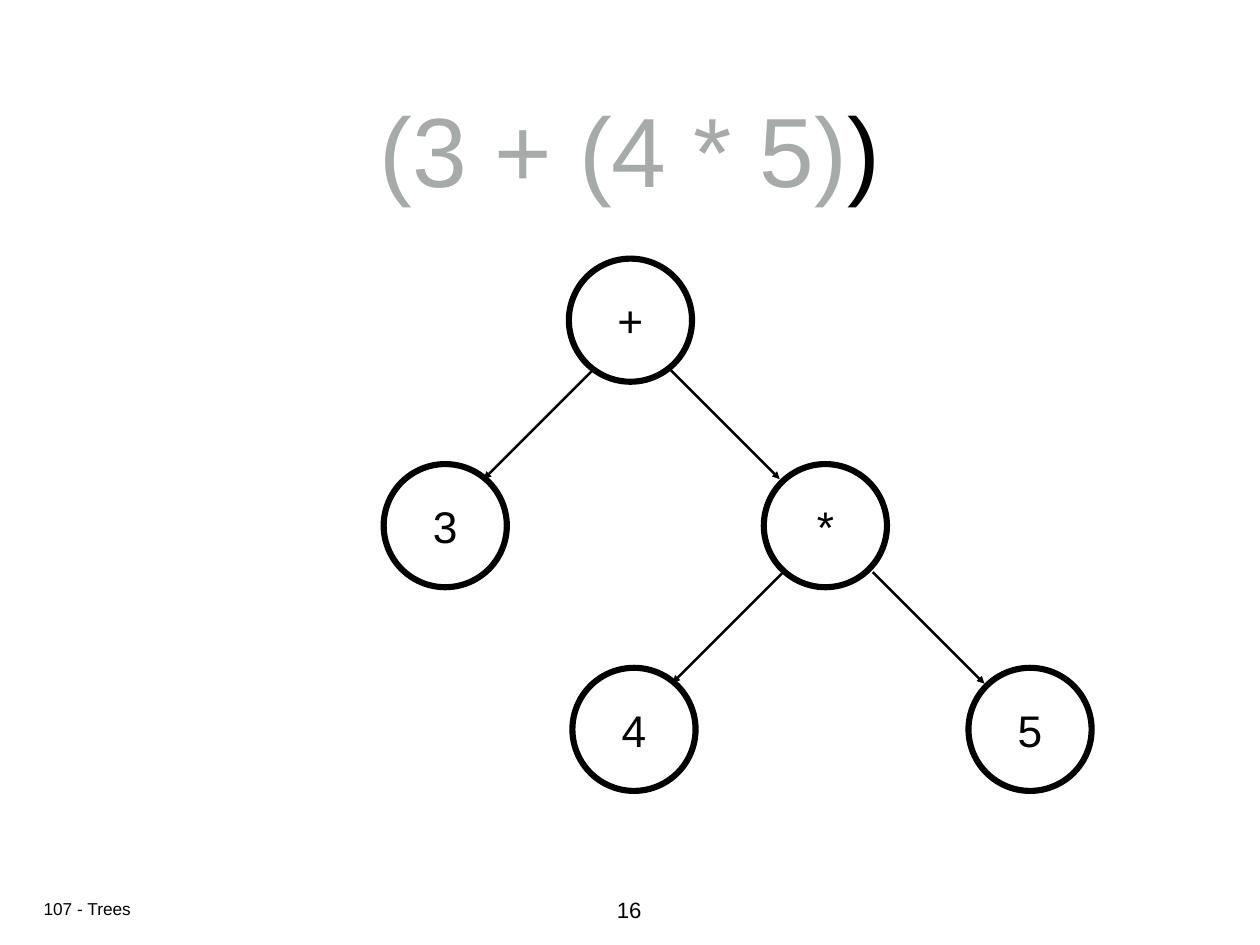
"""Build the expression tree slide for (3 + (4 * 5))."""
import pptx
import pptx.dml.color
import pptx.enum.shapes
import pptx.enum.text
import pptx.oxml
import pptx.oxml.ns
import pptx.util

Inches = pptx.util.Inches


def colour(hex_string):
    return pptx.dml.color.RGBColor.from_string(hex_string)


class TreeSlide:
    font_name = "Arial"
    ink = "000000"
    faded = "A6AAA9"
    paper = "FFFFFF"
    node_size = 1.39
    arrow_span = 1.26

    def __init__(self, presentation):
        self.slide = presentation.slides.add_slide(presentation.slide_layouts[5])

    def set_text(self, shape, runs, size, margin=0, wrap=True, middle=True):
        frame = shape.text_frame
        frame.margin_left = frame.margin_right = Inches(margin)
        frame.margin_top = frame.margin_bottom = Inches(margin)
        frame.word_wrap = wrap
        frame.auto_size = pptx.enum.text.MSO_AUTO_SIZE.NONE
        anchors = pptx.enum.text.MSO_ANCHOR
        frame.vertical_anchor = anchors.MIDDLE if middle else anchors.TOP
        paragraph = frame.paragraphs[0]
        paragraph.alignment = pptx.enum.text.PP_ALIGN.CENTER
        for text, run_colour in runs:
            run = paragraph.add_run()
            run.text = text
            run.font.name = self.font_name
            run.font.size = pptx.util.Pt(size)
            run.font.color.rgb = colour(run_colour)

    def title(self, runs, left, top, width, height):
        shape = self.slide.shapes.title
        shape.left, shape.top = Inches(left), Inches(top)
        shape.width, shape.height = Inches(width), Inches(height)
        self.set_text(shape, runs, 80)

    def label(self, text, left, top, width, height, size, margin=0, middle=True):
        shape = self.slide.shapes.add_textbox(
            Inches(left), Inches(top), Inches(width), Inches(height))
        self.set_text(shape, [(text, self.ink)], size, margin, False, middle)

    def node(self, text, left, top):
        shape = self.slide.shapes.add_shape(
            pptx.enum.shapes.MSO_SHAPE.OVAL, Inches(left), Inches(top),
            Inches(self.node_size), Inches(self.node_size))
        shape.shadow.inherit = False
        shape.fill.solid()
        shape.fill.fore_color.rgb = colour(self.paper)
        shape.line.color.rgb = colour(self.ink)
        shape.line.width = pptx.util.Pt(5)
        self.set_text(shape, [(text, self.ink)], 36)

    def arrow(self, left, top, direction):
        connector = self.slide.shapes.add_connector(
            pptx.enum.shapes.MSO_CONNECTOR.STRAIGHT, Inches(left), Inches(top),
            Inches(left + direction * self.arrow_span),
            Inches(top + self.arrow_span))
        connector.line.color.rgb = colour(self.ink)
        connector.line.width = pptx.util.Pt(2)
        namespace = pptx.oxml.ns.nsdecls("a")
        properties = connector.element.spPr
        properties.find(pptx.oxml.ns.qn("a:ln")).append(
            pptx.oxml.parse_xml(f'<a:tailEnd {namespace} type="triangle"/>'))
        properties.append(pptx.oxml.parse_xml(f"<a:effectLst {namespace}/>"))


def main():
    presentation = pptx.Presentation()
    presentation.slide_width = Inches(14.22)
    presentation.slide_height = Inches(10.67)
    tree = TreeSlide(presentation)

    tree.label("107 - Trees", 0.43, 10.08, 1.11, 0.35, 14, margin=0.06)
    tree.title([("(3 + (4 * 5)", tree.faded), (")", tree.ink)],
               1.04, 0.49, 12.14, 2.36)
    tree.label("16", 6.9, 10.12, 0.4, 0.42, 18, middle=False)

    nodes = [("+", 6.42, 2.92), ("3", 4.33, 5.24), ("*", 8.62, 5.24),
             ("4", 6.46, 7.54), ("5", 10.93, 7.54)]
    for text, left, top in nodes:
        tree.node(text, left, top)

    arrows = [(6.72, 4.15, -1), (7.54, 4.15, 1),
              (8.85, 6.45, -1), (9.85, 6.46, 1)]
    for left, top, direction in arrows:
        tree.arrow(left, top, direction)

    presentation.save("out.pptx")


if __name__ == "__main__":
    main()
